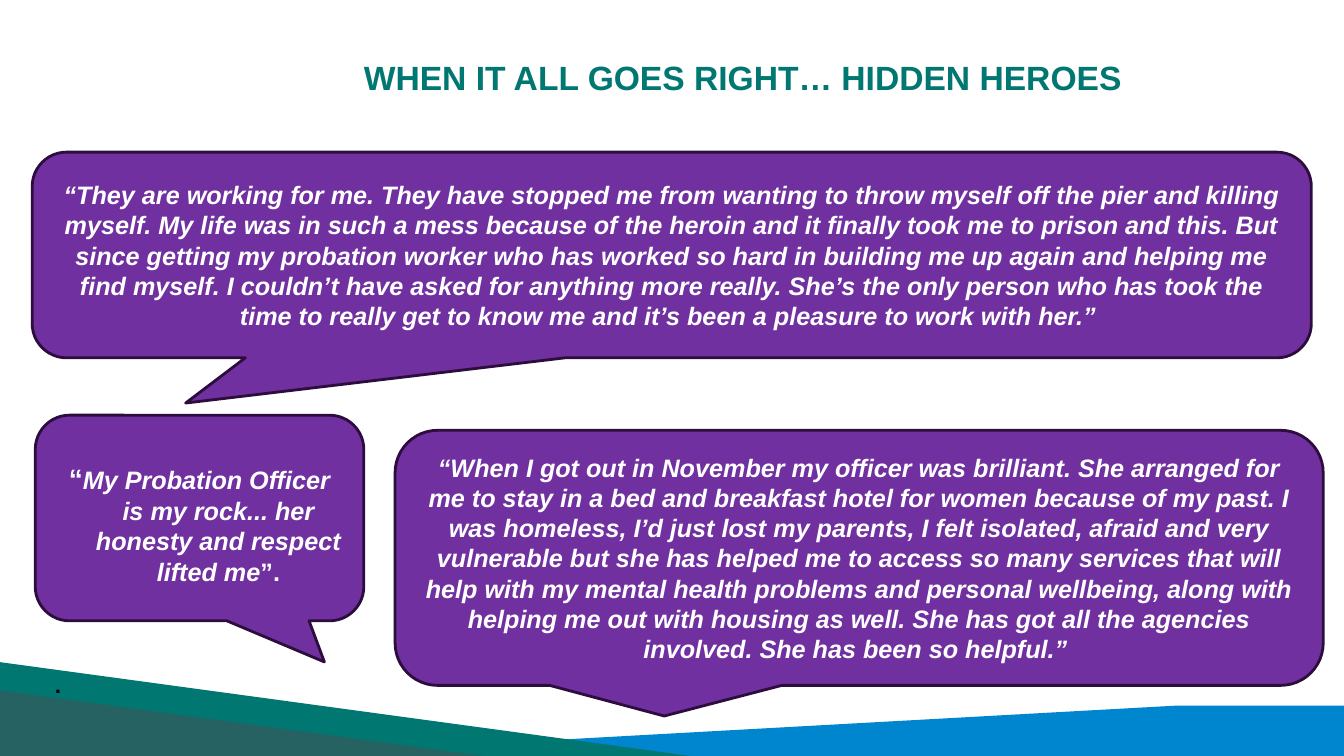
from lxml.etree import SubElement
from pptx import Presentation
from pptx.dml.color import RGBColor
from pptx.enum.shapes import MSO_SHAPE
from pptx.enum.text import MSO_ANCHOR, PP_ALIGN
from pptx.oxml.ns import qn
from pptx.util import Pt

TEAL = RGBColor(0x00, 0x77, 0x70)
BLUE = RGBColor(0x00, 0x85, 0xCF)
GREY = RGBColor(0x4D, 0x4E, 0x53)
PURPLE = RGBColor(0x70, 0x30, 0xA0)
DARK_PURPLE = RGBColor(0x2D, 0x0D, 0x3D)
WHITE = RGBColor(0xFF, 0xFF, 0xFF)
BLACK = RGBColor(0x00, 0x00, 0x00)

SLIDE_WIDTH, SLIDE_HEIGHT = 960, 540

PRISON_QUOTE = (
    "“They are working for me. They have stopped me from wanting to throw myself off the pier "
    "and killing myself. My life was in such a mess because of the heroin and it finally took me "
    "to prison and this. But since getting my probation worker who has worked so hard in building "
    "me up again and helping me find myself. I couldn’t have asked for anything more really. "
    "She’s the only person who has took the time to really get to know me and it’s been a "
    "pleasure to work with her.” "
)
HOUSING_QUOTE = (
    "“When I got out in November my officer was brilliant. She arranged for me to stay in a bed "
    "and breakfast hotel for women because of my past. I was homeless, I’d just lost my parents, "
    "I felt isolated, afraid and very vulnerable but she has helped me to access so many services "
    "that will help with my mental health problems and personal wellbeing, along with helping me "
    "out with housing as well. She has got all the agencies involved. She has been so helpful.” "
)
ROCK_QUOTE = "My Probation Officer is my rock... her honesty and respect lifted me"


def format_run(run, size, color, italic=False):
    run.font.name = "Arial"
    run.font.size = Pt(size)
    run.font.bold = True
    run.font.italic = italic
    run.font.color.rgb = color


def paint_plain(shape, color):
    shape.shadow.inherit = False
    shape.fill.solid()
    shape.fill.fore_color.rgb = color
    shape.line.fill.background()


def add_footer_band(slide, left, top, width, height):
    right, bottom = left + width, top + height
    wave_top = bottom - 36
    builder = slide.shapes.build_freeform(left + 188.6, bottom, scale=Pt(1))
    builder.add_line_segments(
        [(right - 119, wave_top), (right, wave_top), (right, bottom)], close=True
    )
    paint_plain(builder.convert_to_shape(), BLUE)
    for color, slope_width, slope_height in ((TEAL, 493.2, height), (GREY, 344.9, 46.8)):
        triangle = slide.shapes.add_shape(
            MSO_SHAPE.RIGHT_TRIANGLE,
            Pt(left), Pt(bottom - slope_height), Pt(slope_width), Pt(slope_height),
        )
        paint_plain(triangle, color)
    color_element = triangle.fill._xPr.find(qn("a:solidFill"))[0]
    SubElement(color_element, qn("a:alpha")).set("val", "50000")


def add_title(slide, left, top, width, height):
    title = slide.shapes.title
    title.left, title.top, title.width, title.height = map(Pt, (left, top, width, height))
    title.text_frame.text = "WHEN IT ALL GOES RIGHT… HIDDEN HEROES"
    title.text_frame.vertical_anchor = MSO_ANCHOR.MIDDLE
    paragraph = title.text_frame.paragraphs[0]
    paragraph.alignment = PP_ALIGN.LEFT
    format_run(paragraph.runs[0], 24, TEAL)


def add_callout(slide, left, top, width, height, tail, pieces):
    callout = slide.shapes.add_shape(
        MSO_SHAPE.ROUNDED_RECTANGULAR_CALLOUT, Pt(left), Pt(top), Pt(width), Pt(height)
    )
    callout.adjustments[0], callout.adjustments[1] = tail
    callout.shadow.inherit = False
    callout.fill.solid()
    callout.fill.fore_color.rgb = PURPLE
    callout.line.color.rgb = DARK_PURPLE
    callout.line.width = Pt(2)
    frame = callout.text_frame
    frame.word_wrap = True
    frame.vertical_anchor = MSO_ANCHOR.MIDDLE
    paragraph = frame.paragraphs[0]
    paragraph.alignment = PP_ALIGN.CENTER
    for text, size, italic in pieces:
        run = paragraph.add_run()
        run.text = text
        format_run(run, size, WHITE, italic)
    return callout


def add_rock_callout(slide, left, top, width, height):
    pieces = [("“", 20, False), (ROCK_QUOTE, 18, True), ("”.", 18, False)]
    callout = add_callout(slide, left, top, width, height, (0.38, 0.7), pieces)
    frame = callout.text_frame
    frame.margin_top = Pt(12)
    properties = frame.paragraphs[0]._p.get_or_add_pPr()
    properties.set("marL", str(Pt(27)))
    properties.set("indent", str(-Pt(27)))
    stop = slide.shapes.add_textbox(Pt(left + 7), Pt(top + height + 32), Pt(30), Pt(26))
    stop.text_frame.word_wrap = True
    stop.text_frame.text = "."
    format_run(stop.text_frame.paragraphs[0].runs[0], 16, BLACK)


def main():
    presentation = Presentation()
    presentation.slide_width = Pt(SLIDE_WIDTH)
    presentation.slide_height = Pt(SLIDE_HEIGHT)
    slide = presentation.slides.add_slide(presentation.slide_layouts[5])
    add_footer_band(slide, 0, 473, SLIDE_WIDTH, 67)
    add_title(slide, 252.7, 33.8, 622.8, 43.2)
    add_rock_callout(slide, 25.2, 296.6, 234.7, 146.9)
    add_callout(slide, 23, 108.7, 913.7, 146.9, (-0.38, 0.72), [(PRISON_QUOTE, 18, True)])
    add_callout(slide, 282.2, 307.4, 663, 182.2, (-0.21, 0.62), [(HOUSING_QUOTE, 18, True)])
    presentation.save("out.pptx")


if __name__ == "__main__":
    main()
